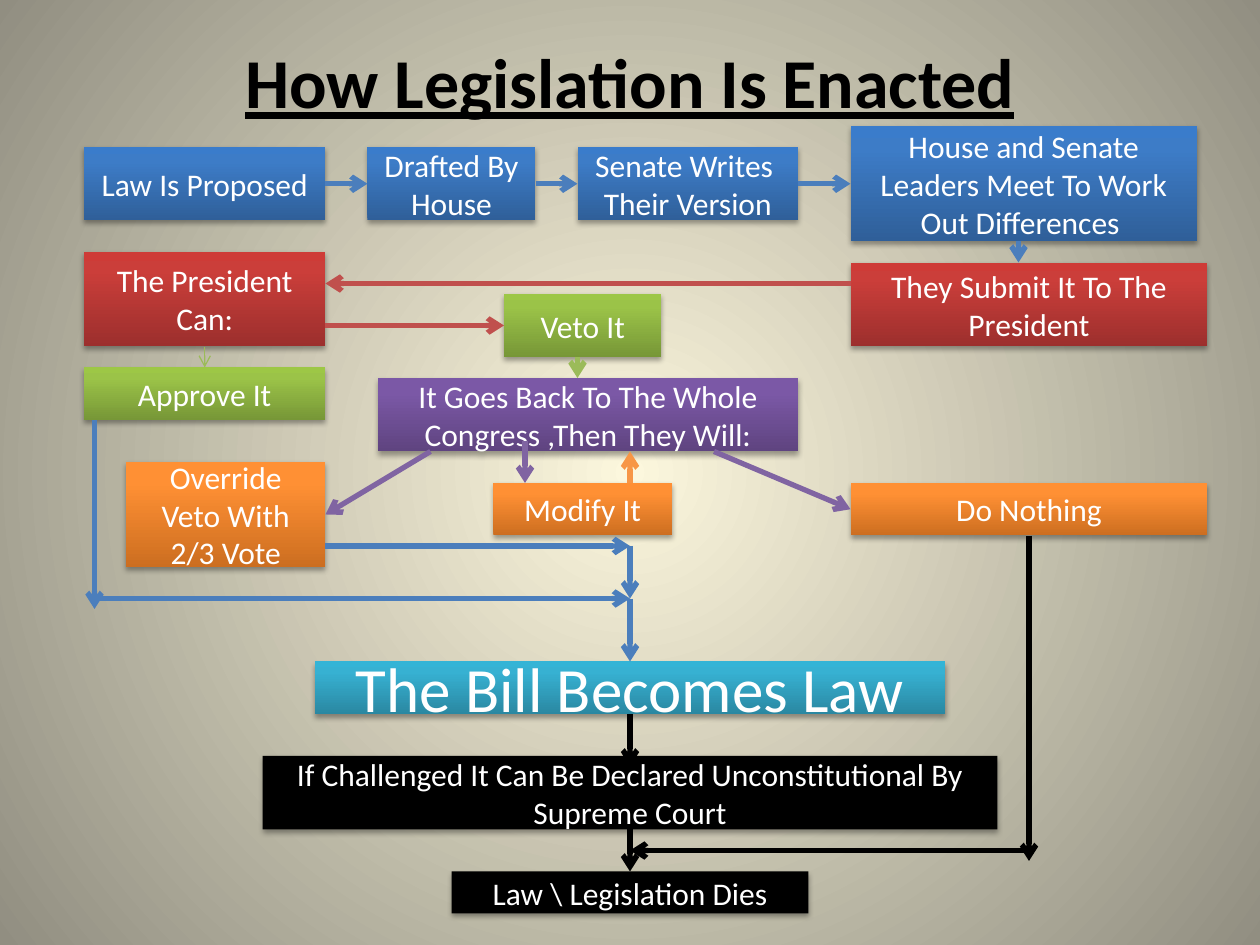
"""Build a flowchart slide on how legislation is enacted."""
from lxml import etree
from pptx import Presentation
from pptx import util as u
from pptx.dml.color import RGBColor
from pptx.enum import shapes, text
from pptx.oxml.ns import nsdecls, qn

COLORS = {
    "black": "000000", "white": "FFFFFF",
    "blue line": "4B7EBC", "red line": "C0504D", "green line": "9BBB59",
    "purple line": "8064A2", "orange line": "F79646",
}
GRADIENTS = {
    "blue": ("2F5F99", "3D7CC7", "3A7CCB"),
    "red": ("9C2F2D", "CB3E3A", "CE3B37"),
    "green": ("779737", "9BC348", "9DC746"),
    "purple": ("5F4480", "7B58A6", "7C57A8"),
    "orange": ("CC6E20", "FF9034", "FF9136"),
    "teal": ("2A88A2", "37B1D2", "34B4D6"),
}
RADIAL = ('<a:path path="circle"><a:fillToRect l="50000" t="50000" '
          'r="50000" b="50000"/></a:path>')
UPWARD = '<a:lin ang="16200000" scaled="0"/>'
SHADOW = ('<a:outerShdw blurRad="39400" dist="22900" dir="5400000" rotWithShape="0">'
          '<a:srgbClr val="000000"><a:alpha val="35000"/></a:srgbClr></a:outerShdw>')


def rgb(name):
    return RGBColor.from_string(COLORS[name])


def node(tag, content="", attributes=""):
    return etree.fromstring(
        f'<a:{tag} {nsdecls("a")} {attributes}>{content}</a:{tag}>')


def set_gradient(owner, fill, stops, direction):
    fill.gradient()
    listed = "".join(
        f'<a:gs pos="{place * 1000}"><a:srgbClr val="{color}"/></a:gs>'
        for place, color in stops)
    old = next(owner.iter(qn("a:gradFill")))
    old.getparent().replace(
        old, node("gradFill", f"<a:gsLst>{listed}</a:gsLst>{direction}", 'rotWithShape="1"'))


def write(frame, words, size=18, color="white", bold=None, underline=None):
    frame.word_wrap = True
    para = frame.paragraphs[0]
    para.alignment = text.PP_ALIGN.CENTER
    span = para.add_run()
    span.text = words
    font = span.font
    font.name, font.size = "Calibri", u.Pt(size)
    font.bold, font.underline = bold, underline
    font.color.rgb = rgb(color)


class Flowchart:
    """Hold the line style and the slide being drawn."""

    def __init__(self, page, line_width=3):
        self.page = page
        self.line_width = line_width

    def background(self, center, edge):
        set_gradient(self.page.element, self.page.background.fill,
                     ((0, center), (100, edge)), RADIAL)

    def title(self, words, left, top, width, height):
        title = self.page.shapes.title
        title.left, title.top = u.Pt(left), u.Pt(top)
        title.width, title.height = u.Pt(width), u.Pt(height)
        title.text_frame.auto_size = text.MSO_AUTO_SIZE.SHAPE_TO_FIT_TEXT
        write(title.text_frame, words, size=40, color="black", bold=True, underline=True)

    def box(self, words, left, top, width, height, color, size=18):
        box = self.page.shapes.add_shape(
            shapes.MSO_SHAPE.RECTANGLE, u.Pt(left), u.Pt(top), u.Pt(width), u.Pt(height))
        box.line.fill.background()
        if color in GRADIENTS:
            set_gradient(box.element, box.fill,
                         zip((0, 80, 100), GRADIENTS[color]), UPWARD)
        else:
            box.fill.solid()
            box.fill.fore_color.rgb = rgb(color)
        box.element.spPr.append(node("effectLst", SHADOW))
        box.text_frame.vertical_anchor = text.MSO_ANCHOR.MIDDLE
        write(box.text_frame, words, size=size)
        return box

    def arrow(self, start, end, color, width=None):
        """Draw from start to end, each a point or a (box, side) pair."""
        line = self.page.shapes.add_connector(shapes.MSO_CONNECTOR.STRAIGHT, 0, 0, 0, 0)
        if isinstance(start[0], (int, float)):
            line.begin_x, line.begin_y = map(u.Pt, start)
        else:
            line.begin_connect(*start)
        if isinstance(end[0], (int, float)):
            line.end_x, line.end_y = map(u.Pt, end)
        else:
            line.end_connect(*end)
        line.line.color.rgb = rgb(color)
        line.line.width = u.Pt(width or self.line_width)
        line.line._get_or_add_ln().append(node("tailEnd", attributes='type="arrow"'))
        line._element.spPr.append(node("effectLst"))


def main():
    deck = Presentation()
    deck.slide_width, deck.slide_height = u.Pt(720), u.Pt(540)
    chart = Flowchart(deck.slides.add_slide(deck.slide_layouts[5]))
    chart.background("FCF7DD", "918E81")
    chart.title("How Legislation Is Enacted", 120, 18, 480, 55.7)

    proposed = chart.box("Law Is Proposed", 48, 84, 138, 42, "blue")
    drafted = chart.box("Drafted By House", 210, 84, 96, 42, "blue")
    senate = chart.box("Senate Writes  Their Version", 330, 84, 126, 42, "blue")
    leaders = chart.box("House and Senate Leaders Meet To Work Out Differences ",
                        486, 72, 198, 66, "blue")
    chart.box("They Submit It To The President", 486, 150, 204, 48, "red")
    president = chart.box("The President Can:", 48, 144, 138, 54, "red")
    approve = chart.box("Approve It", 48, 210, 138, 30, "green")
    veto = chart.box("Veto It", 288, 168, 90, 36, "green")
    chart.box("It Goes Back To The Whole Congress ,Then They Will:",
              216, 216, 240, 42, "purple")
    nothing = chart.box("Do Nothing", 486, 276, 204, 30, "orange")
    chart.box("Modify It", 282, 276, 102, 30, "orange")
    override = chart.box("Override Veto With 2/3 Vote", 72, 264, 114, 60, "orange")
    law = chart.box("The Bill Becomes Law", 180, 378, 360, 30, "teal", size=36)
    court = chart.box("If Challenged It Can Be Declared Unconstitutional By Supreme Court",
                      150, 432, 420, 42, "black")
    dies = chart.box("Law \\ Legislation Dies", 258, 498, 204, 24, "black")

    top, left, bottom, right = range(4)
    steps = (proposed, drafted, senate, leaders)
    for before, after in zip(steps, steps[1:]):
        chart.arrow((before, right), (after, left), "blue line")
    chart.arrow((president, bottom), (approve, top), "green line", width=0.75)
    for start, end, color in (
        ((582, 138), (582, 150), "blue line"),
        ((486, 162), (186, 162), "red line"),
        ((186, 186), (veto, left), "red line"),
        ((330, 204), (330, 216), "green line"),
        ((408, 258), (nothing, left), "purple line"),
        ((300, 252), (300, 276), "purple line"),
        ((246, 258), (override, right), "purple line"),
        ((360, 276), (360, 258), "orange line"),
        ((54, 240), (54, 348), "blue line"),
        ((54, 342), (360, 342), "blue line"),
        ((186, 312), (360, 312), "blue line"),
        ((360, 312), (360, 342), "blue line"),
        ((360, 342), (law, top), "blue line"),
        ((law, bottom), (360, 438), "black"),
        ((nothing, bottom), (588, 492), "black"),
        ((588, 486), (360, 486), "black"),
        ((court, bottom), (dies, top), "black"),
    ):
        chart.arrow(start, end, color)
    deck.save("out.pptx")


if __name__ == "__main__":
    main()
